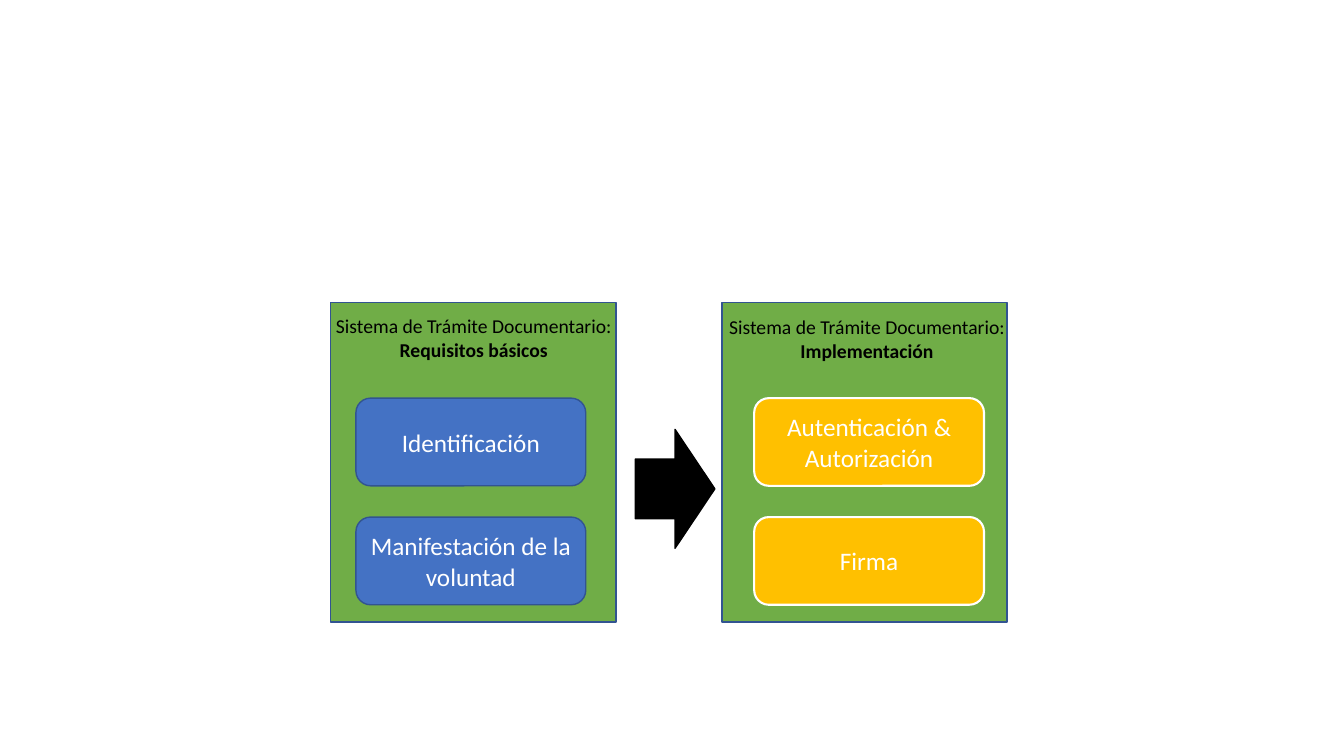
from dataclasses import dataclass

from pptx import Presentation
from pptx.dml.color import RGBColor
from pptx.enum.shapes import MSO_SHAPE
from pptx.enum.text import MSO_ANCHOR, MSO_AUTO_SIZE, PP_ALIGN
from pptx.util import Inches, Pt


@dataclass(frozen=True)
class Theme:
    font: str = "Calibri"
    heading_size: int = 14
    box_size: int = 18
    green: str = "70AD47"
    blue: str = "4472C4"
    navy: str = "325491"
    amber: str = "FFC000"
    white: str = "FFFFFF"
    black: str = "000000"


class SlideBuilder:
    def __init__(self, slide, theme):
        self.slide = slide
        self.theme = theme

    def add_text(self, p, text, size, color, bold=False):
        p.alignment = PP_ALIGN.CENTER
        r = p.add_run()
        r.text = text
        formats = {"name": self.theme.font, "size": Pt(size), "bold": bold}
        for name, value in formats.items():
            setattr(r.font, name, value)
        r.font.color.rgb = RGBColor.from_string(color)

    def shape(self, kind, at, fill, line, width=1):
        sp = self.slide.shapes.add_shape(kind, *map(Inches, at))
        sp.shadow.inherit = False
        sp.fill.solid()
        sp.fill.fore_color.rgb = RGBColor.from_string(fill)
        sp.line.color.rgb = RGBColor.from_string(line)
        sp.line.width = Pt(width)
        return sp

    def box(self, at, text, fill, line, width):
        sp = self.shape(MSO_SHAPE.ROUNDED_RECTANGLE, at, fill, line, width)
        tf = sp.text_frame
        tf.word_wrap = True
        tf.vertical_anchor = MSO_ANCHOR.MIDDLE
        self.add_text(tf.paragraphs[0], text, self.theme.box_size, self.theme.white)

    def heading(self, at, title, subtitle):
        """Add a centred title with a bold second line."""
        tf = self.slide.shapes.add_textbox(*map(Inches, at)).text_frame
        tf.word_wrap = False
        tf.auto_size = MSO_AUTO_SIZE.SHAPE_TO_FIT_TEXT
        size, color = self.theme.heading_size, self.theme.black
        self.add_text(tf.paragraphs[0], title, size, color)
        self.add_text(tf.add_paragraph(), subtitle, size, color, bold=True)


def main():
    prs = Presentation()
    prs.slide_width, prs.slide_height = Inches(13.33), Inches(7.5)
    theme = Theme()
    s = SlideBuilder(prs.slides.add_slide(prs.slide_layouts[6]), theme)

    # panel left, box left, heading left and top, subtitle, boxes, box style
    panels = [
        (3.28, 3.53, 3.22, 3.07, "Requisitos básicos",
         ["Identificación", "Manifestación de la voluntad"],
         (theme.blue, theme.navy, 1)),
        (7.16, 7.48, 7.12, 3.08, "Implementación",
         ["Autenticación & Autorización", "Firma"],
         (theme.amber, theme.white, 1.5)),
    ]
    for left, box_left, head_left, head_top, subtitle, labels, style in panels:
        s.shape(MSO_SHAPE.RECTANGLE, (left, 3, 2.83, 3.17), theme.green, theme.navy)
        for i, label in enumerate(labels):
            s.box((box_left, 3.95 + 1.18 * i, 2.28, 0.87), label, *style)
        s.heading((head_left, head_top, 2.96, 0.57),
                  "Sistema de Trámite Documentario:", subtitle)

    s.shape(MSO_SHAPE.RIGHT_ARROW, (6.3, 4.26, 0.79, 1.18), theme.black, theme.black)
    prs.save("out.pptx")


if __name__ == "__main__":
    main()
